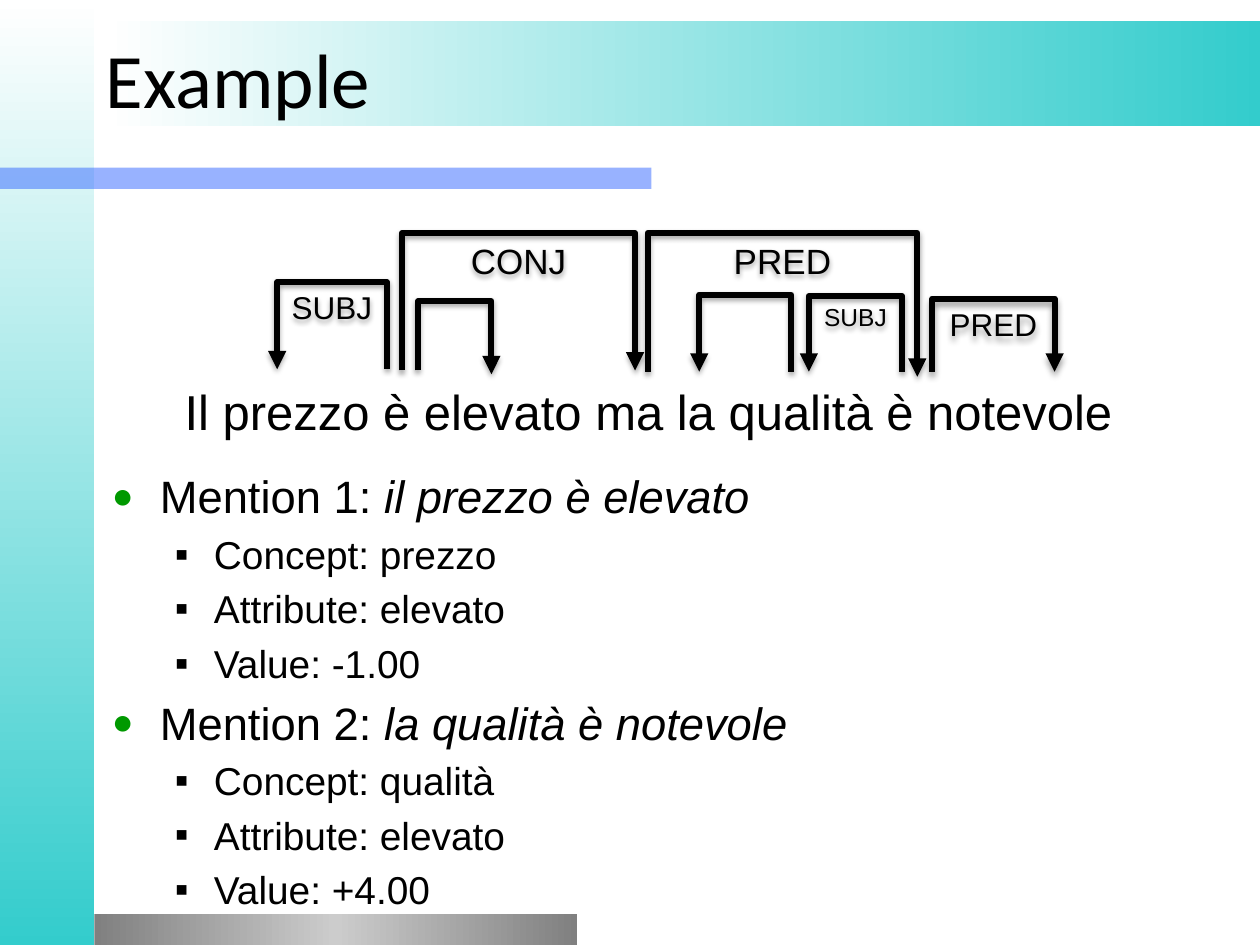
from dataclasses import dataclass

from lxml import etree
from pptx import Presentation
from pptx import util as u
from pptx.dml.color import RGBColor
from pptx.enum import shapes, text
from pptx.oxml import ns


@dataclass(frozen=True)
class Theme:
    """Colours, fonts and type sizes of the slide."""
    ink: str = "000000"
    white: str = "FFFFFF"
    teal: str = "33CCCC"
    blue: str = "3366FF"
    dark_grey: str = "808080"
    light_grey: str = "CCCCCC"
    bullet: str = "009900"
    heading_font: str = "Calibri"
    body_font: str = "Arial"
    title: float = 44
    sentence: float = 28
    mention: float = 25.9
    detail: float = 22.2
    arc_width: float = 3.5


THEME = Theme()
SOFT_SHADOW = (35, 3.1, 1.8)
DEEP_SHADOW = (40, 4, 3)

ARCS = [
    ((6.28, 2.95), 2.34, (5.55, 2.95), "", 0, SOFT_SHADOW),
    ((3.07, 2.93), 2.24, (2.2, 2.93), "SUBJ", 18, SOFT_SHADOW),
    ((7.16, 2.95), 2.35, (6.42, 2.95), "SUBJ", 14, SOFT_SHADOW),
    ((3.19, 2.94), 1.85, (5.04, 2.94), "CONJ", 20, SOFT_SHADOW),
    ((7.4, 2.95), 2.37, (8.37, 2.95), "PRED", 18, DEEP_SHADOW),
    ((5.14, 2.95), 1.85, (7.28, 2.99), "PRED", 20, SOFT_SHADOW),
    ((3.32, 2.94), 2.39, (3.9, 2.97), "", 0, SOFT_SHADOW),
]

MENTIONS = [
    ("Mention 1: ", "il prezzo è elevato",
     ["Concept: prezzo", "Attribute: elevato", "Value: -1.00"]),
    ("Mention 2: ", "la qualità è notevole",
     ["Concept: qualità", "Attribute: elevato", "Value: +4.00"]),
]


def sub(parent, tag, **attributes):
    """Append a DrawingML child with the given attributes."""
    values = {name: str(value) for name, value in attributes.items()}
    return etree.SubElement(parent, ns.qn(tag), values)


def add_run(paragraph, wording, size, font=THEME.body_font, italic=False):
    """Add one formatted run."""
    run = paragraph.add_run()
    run.text = wording
    run.font.size = u.Pt(size)
    run.font.name = font
    run.font.italic = italic
    run.font.color.rgb = RGBColor.from_string(THEME.ink)


def add_band(slide, box, colour):
    """Add a plain rectangle without outline."""
    band = slide.shapes.add_shape(
        shapes.MSO_SHAPE.RECTANGLE, *map(u.Inches, box))
    band.shadow.inherit = False
    band.line.fill.background()
    band.fill.solid()
    band.fill.fore_color.rgb = RGBColor.from_string(colour)
    return band


def add_gradient_band(slide, box, colours, angle=0):
    """Add a rectangle with evenly spaced gradient stops."""
    band = add_band(slide, box, colours[0])
    solid = band.element.spPr.find(ns.qn("a:solidFill"))
    gradient = etree.Element(ns.qn("a:gradFill"), rotWithShape="1")
    stops = sub(gradient, "a:gsLst")
    for index, colour in enumerate(colours):
        position = 100000 * index // (len(colours) - 1)
        sub(sub(stops, "a:gs", pos=position), "a:srgbClr", val=colour)
    sub(gradient, "a:lin", ang=angle * 60000, scaled=0)
    solid.getparent().replace(solid, gradient)


def add_backdrop(slide):
    """Add the coloured bands behind the content."""
    fade = [THEME.white, THEME.teal]
    add_gradient_band(slide, (0, 0, 0.75, 7.5), fade, angle=90)
    rule = add_band(slide, (0, 1.33, 5.17, 0.17), THEME.blue)
    colour = rule.element.spPr.find(".//" + ns.qn("a:srgbClr"))
    sub(colour, "a:alpha", val=50000)
    add_gradient_band(slide, (0.75, 7.25, 3.83, 0.25),
                      [THEME.dark_grey, THEME.light_grey, THEME.dark_grey])
    add_gradient_band(slide, (0.84, 0.17, 9.16, 0.83), fade)


def add_title(slide, wording):
    """Fill the title placeholder and bring it in front of the bands."""
    title = slide.shapes.title
    title.left, title.top = u.Inches(0.74), u.Inches(0.17)
    title.width, title.height = u.Inches(8.5), u.Inches(0.89)
    title.text_frame.vertical_anchor = text.MSO_ANCHOR.MIDDLE
    paragraph = title.text_frame.paragraphs[0]
    paragraph.alignment = text.PP_ALIGN.LEFT
    add_run(paragraph, wording, THEME.title, THEME.heading_font)
    title.element.getparent().append(title.element)


def add_text_box(slide, box):
    """Add a wrapping text box and return its text frame."""
    frame = slide.shapes.add_textbox(*map(u.Inches, box)).text_frame
    frame.word_wrap = True
    return frame


def set_bullet(paragraph, mark, margin, indent, colour=None, percent=100):
    """Give a paragraph a hanging bullet."""
    properties = paragraph._p.get_or_add_pPr()
    properties.set("marL", str(u.Inches(margin)))
    properties.set("indent", str(-u.Inches(indent)))
    if colour:
        sub(sub(properties, "a:buClr"), "a:srgbClr", val=colour)
    sub(properties, "a:buSzPct", val=percent * 1000)
    sub(properties, "a:buFont", typeface=THEME.body_font)
    sub(properties, "a:buChar", char=mark)


def add_mentions(slide):
    """Add the bulleted mentions with their details."""
    frame = add_text_box(slide, (0.79, 3.67, 9, 3.58))
    for index, (label, quote, details) in enumerate(MENTIONS):
        heading = frame.add_paragraph() if index else frame.paragraphs[0]
        heading.space_before = u.Pt(5)
        set_bullet(heading, "●", 0.38, 0.38, THEME.bullet, 80)
        add_run(heading, label, THEME.mention)
        add_run(heading, quote, THEME.mention, italic=True)
        for wording in details:
            detail = frame.add_paragraph()
            detail.level = 1
            detail.space_before = u.Pt(4.4)
            set_bullet(detail, "▪", 0.81, 0.31)
            add_run(detail, wording, THEME.detail)


def add_arc(slide, start, top, end, label, size, shadow):
    """Add a square dependency arc with an arrowhead and a label."""
    corners = [start, (start[0], top), (end[0], top), end]
    first, *others = [tuple(map(u.Inches, corner)) for corner in corners]
    builder = slide.shapes.build_freeform(*first)
    builder.add_line_segments(others, close=False)
    arc = builder.convert_to_shape()
    arc.shadow.inherit = False
    arc.fill.background()
    arc.line.width = u.Pt(THEME.arc_width)
    arc.line.color.rgb = RGBColor.from_string(THEME.ink)
    sub(arc.line._get_or_add_ln(), "a:tailEnd", type="triangle")

    opacity, blur, distance = shadow
    effects = arc.element.spPr.find(ns.qn("a:effectLst"))
    outer = sub(effects, "a:outerShdw", blurRad=u.Pt(blur),
                dist=u.Pt(distance), dir=90 * 60000, rotWithShape=0)
    colour = sub(outer, "a:srgbClr", val=THEME.ink)
    sub(colour, "a:alpha", val=opacity * 1000)

    if label:
        frame = arc.text_frame
        frame.vertical_anchor = text.MSO_ANCHOR.TOP
        frame.margin_left = frame.margin_right = 0
        frame.paragraphs[0].alignment = text.PP_ALIGN.CENTER
        add_run(frame.paragraphs[0], label, size)


def add_sentence(slide, wording):
    """Add the parsed sentence under the arcs."""
    frame = add_text_box(slide, (0.79, 2.98, 8.71, 0.57))
    frame.paragraphs[0].alignment = text.PP_ALIGN.CENTER
    add_run(frame.paragraphs[0], wording, THEME.sentence)


def main():
    """Build and save the slide."""
    deck = Presentation()
    deck.slide_width, deck.slide_height = u.Inches(10), u.Inches(7.5)
    slide = deck.slides.add_slide(deck.slide_layouts[5])
    add_backdrop(slide)
    add_title(slide, "Example")
    add_mentions(slide)
    for arc in ARCS:
        add_arc(slide, *arc)
    add_sentence(slide, "Il prezzo è elevato ma la qualità è notevole")
    deck.save("out.pptx")


if __name__ == "__main__":
    main()
